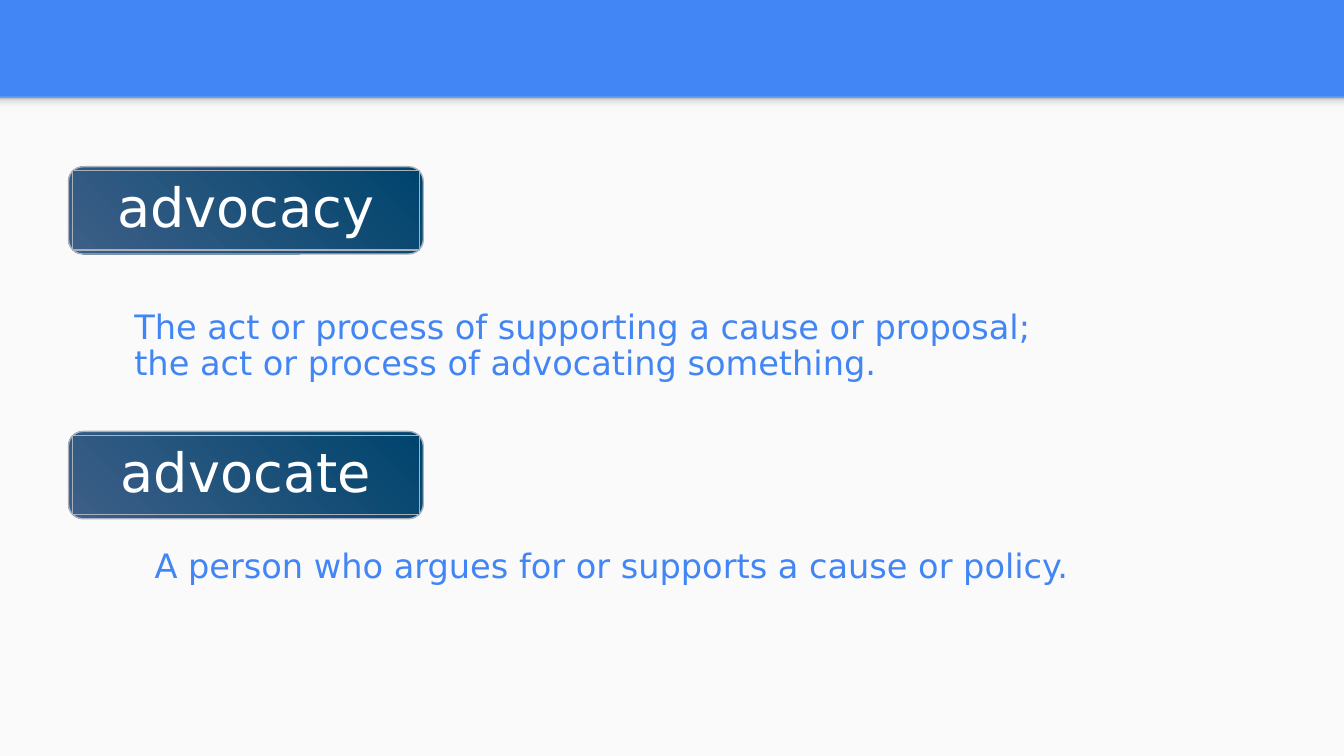
from dataclasses import dataclass

from lxml import etree
from pptx import Presentation
from pptx import util as u
from pptx.dml.color import RGBColor
from pptx.enum import shapes, text
from pptx.oxml.ns import qn


@dataclass(frozen=True)
class Theme:
    font: str = "DejaVu Sans"
    blue: str = "4285F4"
    paper: str = "FAFAFA"
    white: str = "FFFFFF"
    border: str = "A8B0BE"
    badge: tuple = ((0, "3C5F87"), (100, "00446D"))
    shade: tuple = ((0, "F9F9F9"), (36, "F9F9F9"), (80, "DEDEDE"), (100, "999999"))
    term_size: int = 29
    body_size: int = 18
    border_width: float = 0.75


THEME = Theme()
SLIDE_W = 10
SLIDE_H = SLIDE_W * 9 / 16
HEADER_H = 0.72
BADGE_X, BADGE_W, BADGE_H, BADGE_INSET = 0.51, 2.64, 0.65, 0.03

# term, badge top, definition, definition box (left, top, width, height)
ENTRIES = [
    ("advocacy", 1.24,
     "The act or process of supporting a cause or proposal; "
     "the act or process of advocating something.",
     (0.51, 1.89, 7.73, 1.05)),
    ("advocate", 3.21,
     "A person who argues for or supports a cause or policy.",
     (0.66, 3.8, 7.96, 1.22)),
]


def rgb(color):
    return RGBColor.from_string(color)


def inches(values):
    return [u.Inches(v) for v in values]


def gradient(sp, stops, angle=None):
    """Fill linearly at the angle, or radially from the bottom left if none is given."""
    sp.fill.gradient()
    grad = sp._element.spPr.find(qn("a:gradFill"))
    grad.clear()
    stop_list = etree.SubElement(grad, qn("a:gsLst"))
    for pos, color in stops:
        stop = etree.SubElement(stop_list, qn("a:gs"), pos=str(pos * 1000))
        etree.SubElement(stop, qn("a:srgbClr"), val=color)
    if angle is None:
        path = etree.SubElement(grad, qn("a:path"), path="circle")
        etree.SubElement(path, qn("a:fillToRect"), l="0", t="100000", r="100000", b="0")
    else:
        etree.SubElement(grad, qn("a:lin"), ang=str(angle * 60000), scaled="0")


def add_box(parent, box, kind=shapes.MSO_SHAPE.RECTANGLE, fill=None, line=None):
    sp = parent.add_shape(kind, *inches(box))
    sp.shadow.inherit = False
    if fill:
        sp.fill.solid()
        sp.fill.fore_color.rgb = rgb(fill)
    if line:
        sp.line.color.rgb = rgb(line)
        sp.line.width = u.Pt(THEME.border_width)
    else:
        sp.line.fill.background()
    return sp


def write(sp, content, *, size, color, insets, align=text.PP_ALIGN.LEFT,
          anchor=text.MSO_ANCHOR.TOP):
    tf = sp.text_frame
    tf.word_wrap = True
    tf.vertical_anchor = anchor
    (tf.margin_left, tf.margin_top,
     tf.margin_right, tf.margin_bottom) = inches(insets)
    p = tf.paragraphs[0]
    p.alignment, p.line_spacing = align, 0.9
    r = p.add_run()
    r.text = content
    r.font.name, r.font.size = THEME.font, u.Pt(size)
    r.font.color.rgb = rgb(color)


def add_badge(slide, term, top):
    group = slide.shapes.add_group_shape()
    outer = add_box(group.shapes, (BADGE_X, top, BADGE_W, BADGE_H),
                    shapes.MSO_SHAPE.ROUNDED_RECTANGLE, line=THEME.border)
    inner = add_box(group.shapes,
                    (BADGE_X + BADGE_INSET, top + BADGE_INSET,
                     BADGE_W - 2 * BADGE_INSET, BADGE_H - 2 * BADGE_INSET),
                    line=THEME.border)
    for sp in (outer, inner):
        gradient(sp, THEME.badge)
    write(inner, term, size=THEME.term_size, color=THEME.white,
          insets=(0.17, 0, 0.17, 0), align=text.PP_ALIGN.CENTER,
          anchor=text.MSO_ANCHOR.MIDDLE)


def add_definition(slide, content, box):
    sp = slide.shapes.add_textbox(*inches(box))
    write(sp, content, size=THEME.body_size, color=THEME.blue,
          insets=(0.49, 0.46, 0.49, 0.16))


def add_backdrop(slide):
    bg = slide.background.fill
    bg.solid()
    bg.fore_color.rgb = rgb(THEME.blue)
    add_box(slide.shapes, (0, HEADER_H, SLIDE_W, SLIDE_H - HEADER_H), fill=THEME.paper)
    shade = add_box(slide.shapes, (0, HEADER_H, SLIDE_W, 0.12))
    gradient(shade, THEME.shade, angle=270)


def main():
    prs = Presentation()
    prs.slide_width, prs.slide_height = inches((SLIDE_W, SLIDE_H))
    slide = prs.slides.add_slide(prs.slide_layouts[6])
    add_backdrop(slide)
    for term, top, definition, box in ENTRIES:
        add_definition(slide, definition, box)
        add_badge(slide, term, top)
    prs.save("out.pptx")


if __name__ == "__main__":
    main()
